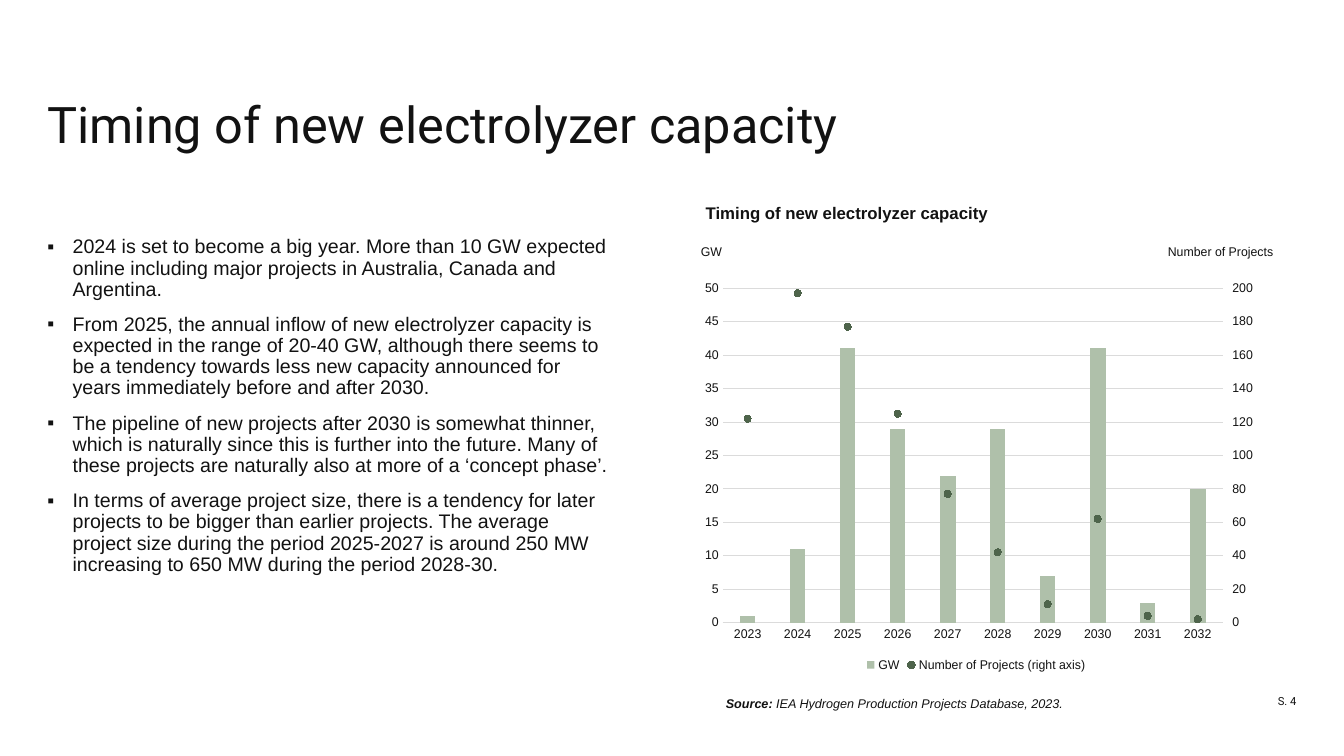
import copy
import pptx
import pptx.util
import pptx.oxml
import pptx.oxml.ns
import pptx.chart.axis
import pptx.chart.data
import pptx.dml.color
import pptx.enum.chart
import pptx.enum.text

RGB = pptx.dml.color.RGBColor
INK, GRID = RGB(0x12, 0x12, 0x12), RGB(0xDB, 0xDB, 0xDB)
SAGE, MOSS = RGB(0xAF, 0xC0, 0xAA), RGB(0x4E, 0x64, 0x4B)
WIDE, HIGH = 13.33, 7.5
EDGE, TOP = 0.47, 2.35
TITLE = "Timing of new electrolyzer capacity"
POINTS = [
    "2024 is set to become a big year. More than 10 GW expected online including major projects in Australia, Canada and Argentina.",
    "From 2025, the annual inflow of new electrolyzer capacity is expected in the range of 20-40 GW, although there seems to be a tendency towards less new capacity announced for years immediately before and after 2030.",
    "The pipeline of new projects after 2030 is somewhat thinner, which is naturally since this is further into the future. Many of these projects are naturally also at more of a ‘concept phase’.",
    "In terms of average project size, there is a tendency for later projects to be bigger than earlier projects. The average project size during the period 2025-2027 is around 250 MW increasing to 650 MW during the period 2028-30.",
]
SOURCE = [("Source:", True), (" IEA Hydrogen Production Projects Database, 2023.", False)]
YEARS = [str(year) for year in range(2023, 2033)]
POWER = ("GW", [1, 11, 41, 29, 22, 29, 7, 41, 3, 20])
COUNT = ("Number of Projects (right axis)", [122, 197, 177, 125, 77, 42, 11, 62, 4, 2])
PLOT = (0.056, 0.117, 0.876, 0.761)

inch, pt, qn = pptx.util.Inches, pptx.util.Pt, pptx.oxml.ns.qn
ANCHOR = pptx.enum.text.MSO_ANCHOR
ALIGN = pptx.enum.text.PP_ALIGN
KIND = pptx.enum.chart
NS = pptx.oxml.ns.nsdecls


def style(font, size, face="Arial", bold=False, slant=False):
    font.size, font.name = pt(size), face
    font.bold, font.italic = bold, slant
    font.color.rgb = INK


def write(slide, box, paras, size, face="Arial", bold=False, slant=False,
          pad=0, anchor=ANCHOR.TOP, align=ALIGN.LEFT, lead=1.0, bullet=None):
    frame = slide.shapes.add_textbox(*map(inch, box)).text_frame
    frame.word_wrap, frame.vertical_anchor = True, anchor
    frame.margin_left = frame.margin_right = inch(pad)
    frame.margin_top = frame.margin_bottom = inch(pad / 2)
    for row, runs in enumerate(paras):
        para = frame.add_paragraph() if row else frame.paragraphs[0]
        para.alignment, para.line_spacing = align, lead
        if row:
            para.space_before = pt(10)
        if bullet:
            props = para._p.get_or_add_pPr()
            props.set("marL", str(inch(0.25)))
            props.set("indent", str(-inch(0.25)))
            props.append(pptx.oxml.parse_xml(f'<a:buFont {NS("a")} typeface="Arial"/>'))
            props.append(pptx.oxml.parse_xml(f'<a:buChar {NS("a")} char="{bullet}"/>'))
        for text, heavy in runs:
            run = para.add_run()
            run.text = text
            style(run.font, size, face, bold or heavy, slant)


def place(node, spot, inner, **parts):
    for old in node.findall(qn("c:layout")):
        node.remove(old)
    target = '<c:layoutTarget val="inner"/>' if inner else ""
    modes = "".join(f'<c:{key}Mode val="edge"/>' for key in "xy")
    sizes = "".join(f'<c:{key} val="{val}"/>' for key, val in parts.items())
    node.insert(spot, pptx.oxml.parse_xml(
        f'<c:layout {NS("c")}><c:manualLayout>{target}{modes}{sizes}'
        '</c:manualLayout></c:layout>'))


def label(axis, text, left):
    title = axis.axis_title
    title.text_frame.text = text
    style(title.text_frame.paragraphs[0].runs[0].font, 9)
    body = next(title.element.iter(qn("a:bodyPr")))
    body.set("rot", "0")
    body.set("vert", "horz")
    place(title.element, 1, False, x=left, y=0.01)


def scale(axis, top, step):
    axis.minimum_scale, axis.maximum_scale, axis.major_unit = 0, top, step


def split(chart):
    area = next(chart.element.iter(qn("c:plotArea")))
    bars = area.find(qn("c:barChart"))
    dots = bars.findall(qn("c:ser"))[1]
    flip = dots.find(qn("c:invertIfNegative"))
    if flip is not None:
        dots.remove(flip)
    line = pptx.oxml.parse_xml(
        f'<c:lineChart {NS("c")}><c:grouping val="standard"/>'
        '<c:varyColors val="0"/><c:marker val="1"/>'
        '<c:axId val="5001"/><c:axId val="5002"/></c:lineChart>')
    line.insert(2, dots)
    bars.addnext(line)
    base, side = area.find(qn("c:catAx")), area.find(qn("c:valAx"))
    cat, val = copy.deepcopy(base), copy.deepcopy(side)
    for node, own, other in ((cat, "5001", "5002"), (val, "5002", "5001")):
        node.find(qn("c:axId")).set("val", own)
        node.find(qn("c:crossAx")).set("val", other)
    val.find(qn("c:axPos")).set("val", "r")
    val.find(qn("c:crosses")).set("val", "max")
    side.addnext(val)
    val.addnext(cat)
    place(area, 0, True, **dict(zip("xywh", PLOT)))
    pptx.chart.axis.CategoryAxis(cat).visible = False
    return pptx.chart.axis.ValueAxis(val)


def draw(slide):
    data = pptx.chart.data.CategoryChartData(number_format="#,##0")
    data.categories = YEARS
    for name, vals in (POWER, COUNT):
        data.add_series(name, vals)
    chart = slide.shapes.add_chart(
        KIND.XL_CHART_TYPE.COLUMN_CLUSTERED,
        *map(inch, (6.85, TOP, 5.8, 4.36)), data).chart
    chart.has_title = False
    style(chart.font, 9)
    chart.has_legend = True
    chart.legend.position = KIND.XL_LEGEND_POSITION.BOTTOM
    chart.legend.include_in_layout = False
    style(chart.legend.font, 9)
    base, left = chart.category_axis, chart.value_axis
    for axis in (base, left):
        axis.major_tick_mark = axis.minor_tick_mark = KIND.XL_TICK_MARK.NONE
        style(axis.tick_labels.font, 9)
    base.format.line.color.rgb = GRID
    base.format.line.width = pt(0.75)
    left.format.line.fill.background()
    left.tick_labels.number_format = "#,##0"
    left.tick_labels.number_format_is_linked = False
    left.has_major_gridlines = True
    left.major_gridlines.format.line.color.rgb = GRID
    left.major_gridlines.format.line.width = pt(0.75)
    right = split(chart)
    right.has_major_gridlines = False
    right.major_tick_mark = KIND.XL_TICK_MARK.OUTSIDE
    scale(left, 50, 5)
    scale(right, 200, 20)
    label(left, "GW", 0.014)
    label(right, "Number of Projects", 0.832)
    bars, line = chart.plots
    bars.gap_width, bars.vary_by_categories = 219, False
    fill = bars.series[0].format.fill
    fill.solid()
    fill.fore_color.rgb = SAGE
    dots = line.series[0]
    dots.smooth = False
    dots.format.line.fill.background()
    mark = dots.marker
    mark.style, mark.size = KIND.XL_MARKER_STYLE.CIRCLE, 5
    mark.format.fill.solid()
    mark.format.fill.fore_color.rgb = MOSS
    mark.format.line.color.rgb = MOSS


def main():
    deck = pptx.Presentation()
    deck.slide_width, deck.slide_height = inch(WIDE), inch(HIGH)
    slide = deck.slides.add_slide(deck.slide_layouts[6])
    write(slide, (EDGE, EDGE, 9.87, 1.06), [[(TITLE, False)]], 36,
          face="Roboto", anchor=ANCHOR.BOTTOM, lead=0.9)
    write(slide, (EDGE, TOP, 5.59, 3.32), [[(text, False)] for text in POINTS],
          14, lead=0.9, bullet="▪")
    draw(slide)
    write(slide, (6.9, 1.96, WIDE - 6.9, 0.3), [[(TITLE, False)]], 12, bold=True, pad=0.1)
    write(slide, (7.1, 6.85, 3.61, 0.25), [SOURCE], 9, slant=True, pad=0.1)
    write(slide, (WIDE - EDGE - 1.03, 6.63, 1.03, 0.39), [[("S. 4", False)]], 8,
          face="Roboto", anchor=ANCHOR.BOTTOM, align=ALIGN.RIGHT)
    deck.save("out.pptx")


if __name__ == "__main__":
    main()
